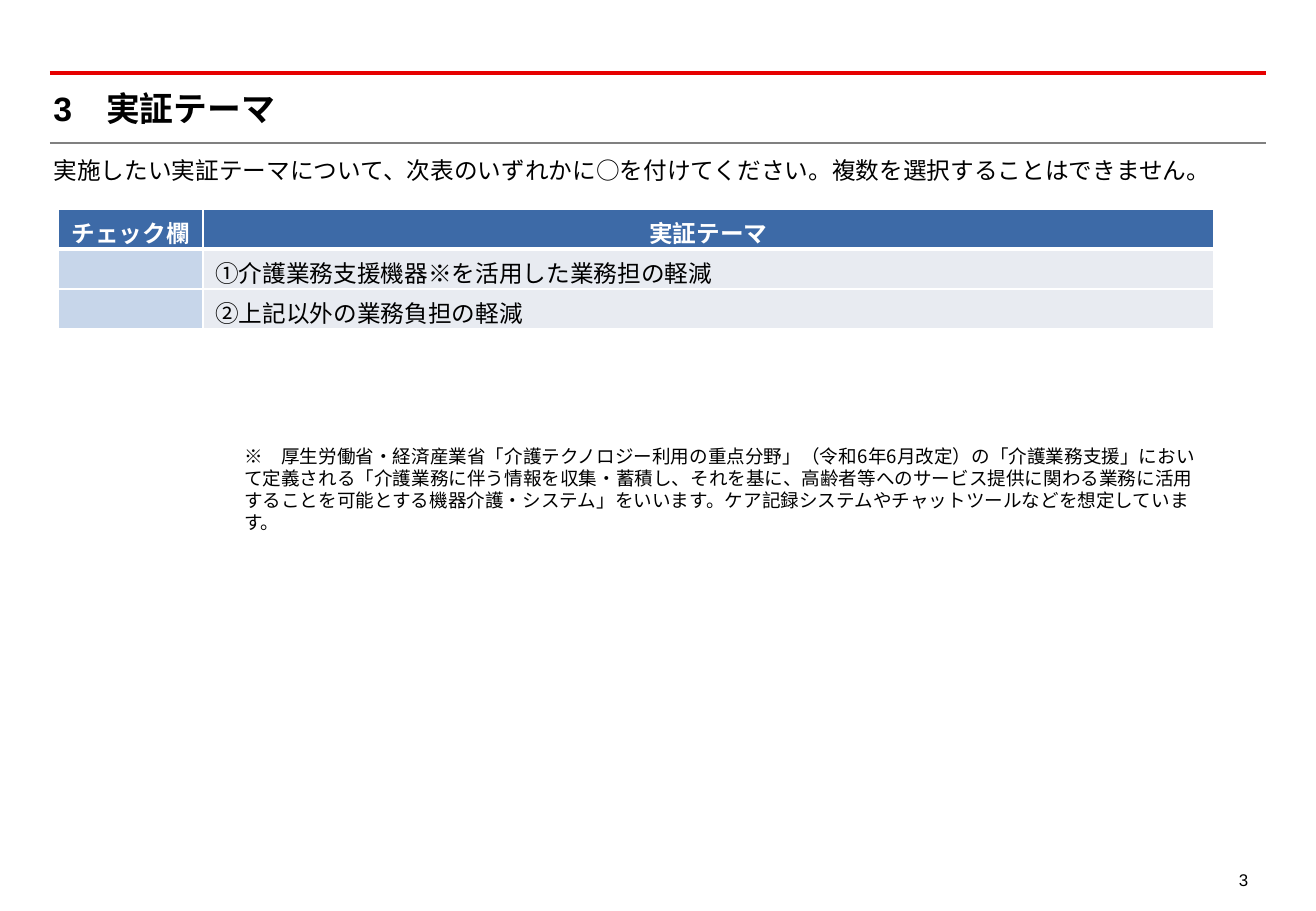
from dataclasses import dataclass

from lxml import etree
from pptx import Presentation
from pptx import util as u
from pptx.dml.color import RGBColor
from pptx.enum import shapes, text
from pptx.oxml import ns


@dataclass(frozen=True)
class Theme:
    latin: str = "Arial"
    japanese: str = "Noto Sans CJK JP"
    ink: str = "000000"
    white: str = "FFFFFF"
    red: str = "E60000"
    grey: str = "808080"
    header: str = "3D6AA7"
    check: str = "C7D6EA"
    body: str = "E8EBF1"
    title_size: int = 20
    text_size: int = 14
    note_size: int = 11
    page_size: int = 10


THEME = Theme()
PX = 9144  # 100 px to the inch
LEFT, CENTER, RIGHT = text.PP_ALIGN.LEFT, text.PP_ALIGN.CENTER, text.PP_ALIGN.RIGHT


def px(*lengths):
    return [u.Emu(length * PX) for length in lengths]


def colour(value):
    return RGBColor.from_string(value)


def add_run(paragraph, words, size, ink=THEME.ink, bold=False, latin=THEME.latin):
    run = paragraph.add_run()
    run.text = words
    run.font.size = u.Pt(size)
    run.font.bold = bold
    run.font.color.rgb = colour(ink)
    run.font.name = latin
    east_asian = etree.SubElement(run._r.get_or_add_rPr(), ns.qn("a:ea"))
    east_asian.set("typeface", THEME.japanese)


def add_text(slide, box, words, size, inset=0, align=LEFT, spacing=1.0,
             anchor=text.MSO_ANCHOR.TOP, **style):
    frame = slide.shapes.add_textbox(*px(*box)).text_frame
    frame.word_wrap = True
    frame.vertical_anchor = anchor
    frame.margin_left = frame.margin_right = px(inset * 2)[0]
    frame.margin_top = frame.margin_bottom = px(inset)[0]
    paragraph = frame.paragraphs[0]
    paragraph.alignment = align
    paragraph.line_spacing = spacing
    add_run(paragraph, words, size, **style)


def add_rule(slide, left, top, width, ink, weight):
    line = slide.shapes.add_connector(
        shapes.MSO_CONNECTOR.STRAIGHT, *px(left, top, left + width, top))
    line.line.color.rgb = colour(ink)
    line.line.width = u.Pt(weight)
    etree.SubElement(line._element.spPr, ns.qn("a:effectLst"))


def add_heading(slide, box, words):
    left, top, width, height = box
    add_rule(slide, left, top, width, THEME.red, 2)
    add_rule(slide, left, top + height, width, THEME.grey, 1.25)
    add_text(slide, (left + 3, top + 12, width - 11, 34), words, THEME.title_size,
             anchor=text.MSO_ANCHOR.MIDDLE, bold=True)


def style_cell(cell, fill, bottom_weight):
    properties = cell._tc.get_or_add_tcPr()
    for side, weight in (("L", 1), ("R", 1), ("T", 1), ("B", bottom_weight)):
        border = etree.SubElement(properties, ns.qn("a:ln" + side), w=str(u.Pt(weight)))
        solid = etree.SubElement(border, ns.qn("a:solidFill"))
        etree.SubElement(solid, ns.qn("a:srgbClr"), val=THEME.white)
    cell.fill.solid()
    cell.fill.fore_color.rgb = colour(fill)
    cell.margin_top, cell.margin_bottom = px(5, 0)


def add_theme_table(slide, box, check_width, rows):
    left, top, width, height = box
    table = slide.shapes.add_table(len(rows), 2, *px(*box)).table
    table.columns[0].width, table.columns[1].width = px(check_width, width - check_width)
    for row_index, row in enumerate(rows):
        is_header = row_index == 0
        table.rows[row_index].height = px(height // len(rows))[0]
        for column_index, words in enumerate(row):
            cell = table.cell(row_index, column_index)
            body_fill = THEME.body if column_index else THEME.check
            style_cell(cell, THEME.header if is_header else body_fill, 3 if is_header else 1)
            paragraph = cell.text_frame.paragraphs[0]
            paragraph.alignment = CENTER if is_header else LEFT
            if words:
                add_run(paragraph, words, THEME.text_size,
                        THEME.white if is_header else THEME.ink, bold=is_header)
            else:  # keeps an empty cell as low as its row
                etree.SubElement(paragraph._p, ns.qn("a:endParaRPr"),
                                 sz=str(THEME.text_size * 100))


def build_theme_slide(presentation):
    slide = presentation.slides.add_slide(presentation.slide_layouts[6])
    # Heading between two rules
    add_heading(slide, (41, 60, 1001, 58), "3　実証テーマ")
    # Instruction
    add_text(slide, (44, 128, 991, 25),
             "実施したい実証テーマについて、次表のいずれかに○を付けてください。複数を選択することはできません。",
             THEME.text_size)
    # Choice of themes
    add_theme_table(slide, (48, 172, 951, 99), 119, [
        ("チェック欄", "実証テーマ"),
        ("", "①介護業務支援機器※を活用した業務担の軽減"),
        ("", "②上記以外の業務負担の軽減"),
    ])
    # Footnote
    add_text(slide, (191, 361, 808, 98),
             "※　厚生労働省・経済産業省「介護テクノロジー利用の重点分野」（令和6年6月改定）の"
             "「介護業務支援」において定義される「介護業務に伴う情報を収集・蓄積し、それを基に、"
             "高齢者等へのサービス提供に関わる業務に活用することを可能とする機器介護・システム」を"
             "いいます。ケア記録システムやチャットツールなどを想定しています。",
             THEME.note_size, inset=5, latin=THEME.japanese)
    # Page number
    add_text(slide, (993, 708, 44, 28), "3", THEME.page_size, inset=5, align=RIGHT, spacing=1.2)


def main():
    presentation = Presentation()
    presentation.slide_width, presentation.slide_height = px(1083, 750)
    build_theme_slide(presentation)
    presentation.save("out.pptx")


if __name__ == "__main__":
    main()
